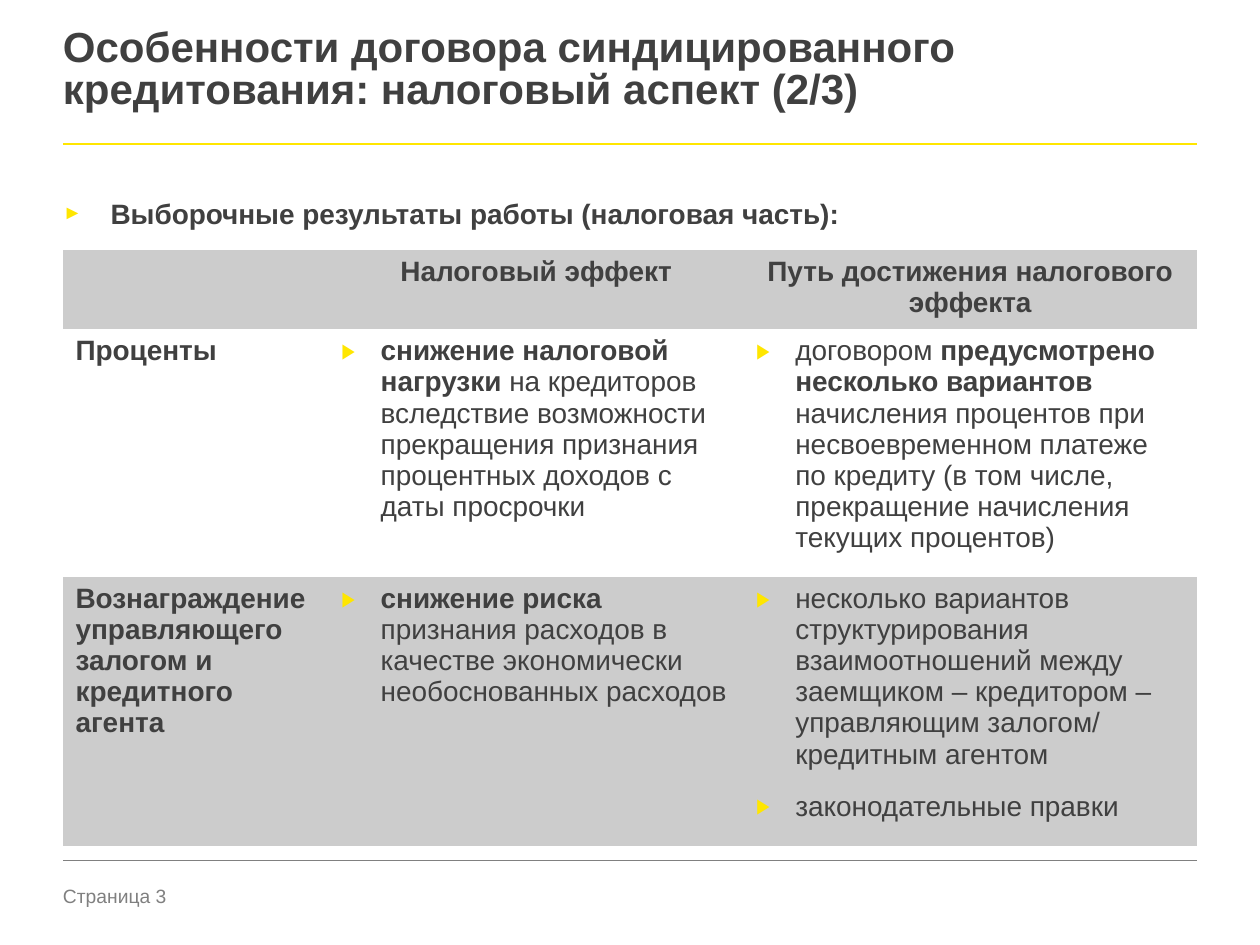
from dataclasses import dataclass
from itertools import product

from lxml.etree import SubElement
from pptx import Presentation
from pptx.dml.color import RGBColor
from pptx.enum.shapes import MSO_CONNECTOR as Connector
from pptx.enum.text import PP_ALIGN as Align
from pptx.oxml.ns import qn
from pptx.slide import Slide
from pptx.util import Cm, Pt

DARK = RGBColor(0x40, 0x40, 0x40)
GRAY = RGBColor(0x80, 0x80, 0x80)
BAND = RGBColor(0xCC, 0xCC, 0xCC)
YELLOW = RGBColor(0xFF, 0xE6, 0x00)

NO_STYLE = "{2D5ABB26-0587-4C30-8999-92F81FD0307C}"
LEFT, WIDTH = 1.27, 22.86
COLUMNS = (5.36, 8.36, 9.14)
ROWS = (1.51, 4.64, 5.08)

TABLE = [
    [
        [],
        [[("Налоговый эффект", True)]],
        [[("Путь достижения налогового эффекта", True)]],
    ],
    [
        [[("Проценты", True)]],
        [[("снижение налоговой нагрузки ", True),
          ("на кредиторов вследствие возможности прекращения признания "
           "процентных доходов с даты просрочки", False)]],
        [[("договором ", False),
          ("предусмотрено несколько вариантов ", True),
          ("начисления процентов при несвоевременном платеже по кредиту "
           "(в том числе, прекращение начисления текущих процентов)", False)]],
    ],
    [
        [[("Вознаграждение управляющего залогом и кредитного агента", True)]],
        [[("снижение риска ", True),
          ("признания расходов в качестве экономически необоснованных расходов", False)]],
        [[("несколько вариантов структурирования взаимоотношений между заемщиком "
           "– кредитором – управляющим залогом/ кредитным агентом", False)],
         [("законодательные правки", False)]],
    ],
]


@dataclass
class SlideBuilder:
    """Draws styled elements on the current slide."""

    slide: Slide
    font_name: str = "Arial"
    body_size: int = 16

    def style(self, paragraph, size, color, bold=None):
        font = paragraph.font
        font.name, font.size, font.bold = self.font_name, Pt(size), bold
        font.color.rgb = color

    def bullet(self, paragraph, symbol, indent, percent):
        properties = paragraph._p.get_or_add_pPr()
        properties.set("marL", str(Cm(indent)))
        properties.set("indent", str(-Cm(indent)))
        color = SubElement(properties, qn("a:buClr"))
        SubElement(color, qn("a:srgbClr"), val=str(YELLOW))
        SubElement(properties, qn("a:buSzPct"), val=str(percent * 1000))
        SubElement(properties, qn("a:buFont"), typeface=self.font_name)
        SubElement(properties, qn("a:buChar"), char=symbol)

    def text(self, content, top, width, height, size, color=DARK, bold=False):
        shape = self.slide.shapes.add_textbox(Cm(LEFT), Cm(top), Cm(width), Cm(height))
        frame = shape.text_frame
        frame.word_wrap = True
        frame.margin_left = frame.margin_right = frame.margin_top = frame.margin_bottom = 0
        paragraph = frame.paragraphs[0]
        paragraph.text = content
        self.style(paragraph, size, color, bold)
        return paragraph

    def bullet_text(self, content, top, height):
        paragraph = self.text(content, top, WIDTH, height, self.body_size, bold=True)
        properties = paragraph._p.get_or_add_pPr()
        properties.remove(properties.find(qn("a:defRPr")))
        self.bullet(paragraph, "►", 0.96, 70)
        self.style(paragraph, self.body_size, DARK, True)

    def rule(self, top, color, weight):
        line = self.slide.shapes.add_connector(
            Connector.STRAIGHT, Cm(LEFT), Cm(top), Cm(LEFT + WIDTH), Cm(top))
        line.line.color.rgb = color
        line.line.width = Pt(weight)
        SubElement(line._element.spPr, qn("a:effectLst"))

    def fill_cell(self, cell, paragraphs, centered, bulleted):
        frame = cell.text_frame
        for index, runs in enumerate(paragraphs):
            paragraph = frame.add_paragraph() if index else frame.paragraphs[0]
            if index:
                paragraph.space_before = Pt(6)
            paragraph.space_after = Pt(6)
            if centered:
                paragraph.alignment = Align.CENTER
            if bulleted:
                self.bullet(paragraph, "▶", 0.79, 75)
            self.style(paragraph, self.body_size, DARK)
            for content, bold in runs:
                run = paragraph.add_run()
                run.text = content
                run.font.bold = bold

    def table(self, rows, top):
        frame = self.slide.shapes.add_table(
            len(ROWS), len(COLUMNS), Cm(LEFT), Cm(top), Cm(WIDTH), Cm(sum(ROWS)))
        table = frame.table
        table.first_row = table.horz_banding = False
        table._tbl.tblPr.find(qn("a:tableStyleId")).text = NO_STYLE
        for column, width in zip(table.columns, COLUMNS):
            column.width = Cm(width)
        for row, height in zip(table.rows, ROWS):
            row.height = Cm(height)
        for row, column in product(range(len(ROWS)), range(len(COLUMNS))):
            cell = table.cell(row, column)
            if row % 2:
                cell.fill.background()
            else:
                cell.fill.solid()
                cell.fill.fore_color.rgb = BAND
            self.fill_cell(cell, rows[row][column], row == 0, row > 0 and column > 0)


def main():
    presentation = Presentation()
    presentation.slide_width, presentation.slide_height = Cm(25.4), Cm(19.05)
    builder = SlideBuilder(presentation.slides.add_slide(presentation.slide_layouts[6]))

    builder.text("Страница 3", 17.83, 3.02, 0.66, 11, GRAY)
    builder.rule(2.9, YELLOW, 1.5)
    builder.rule(17.35, GRAY, 0.25)
    title = builder.text(
        "Особенности договора синдицированного кредитования: налоговый аспект (2/3)",
        0.56, 20.19, 2.39, 24, bold=True)
    title.line_spacing = 0.85
    builder.bullet_text("Выборочные результаты работы (налоговая часть):", 3.96, 1.07)
    builder.table(TABLE, 5.03)
    presentation.save("out.pptx")


if __name__ == "__main__":
    main()
